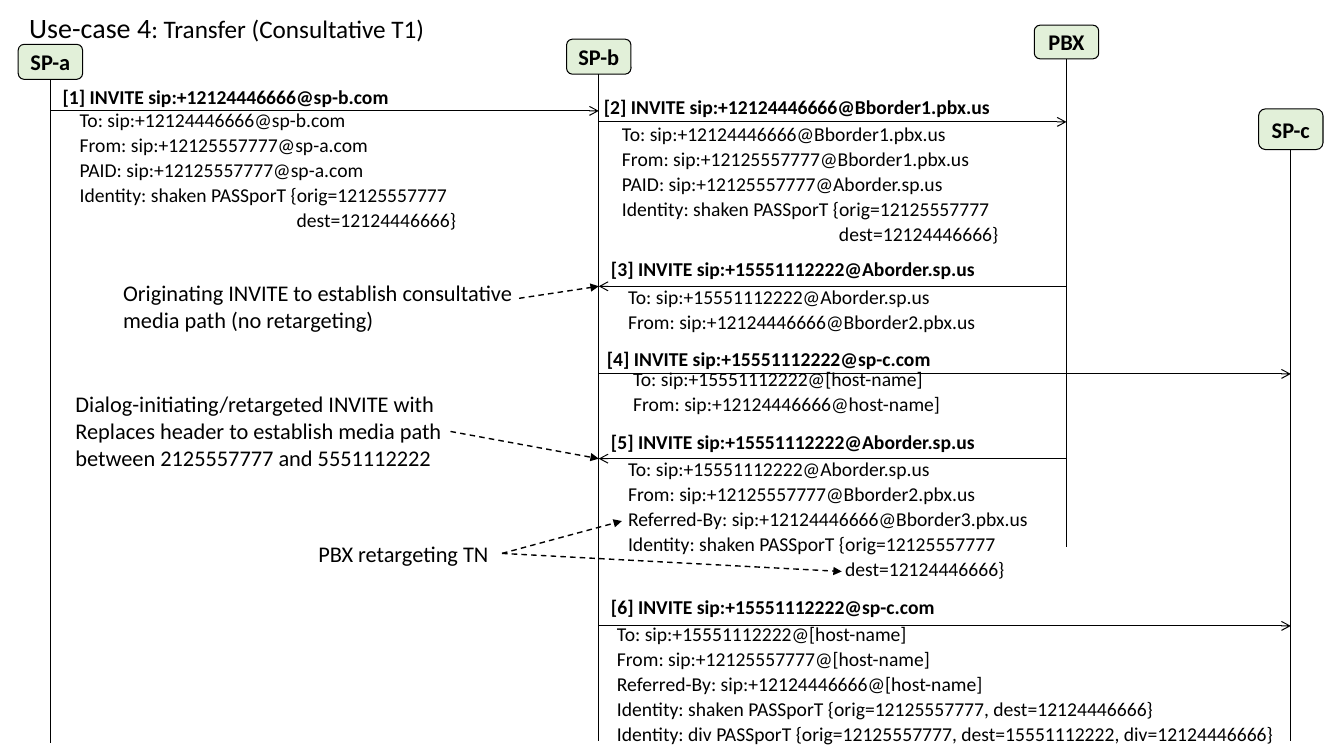
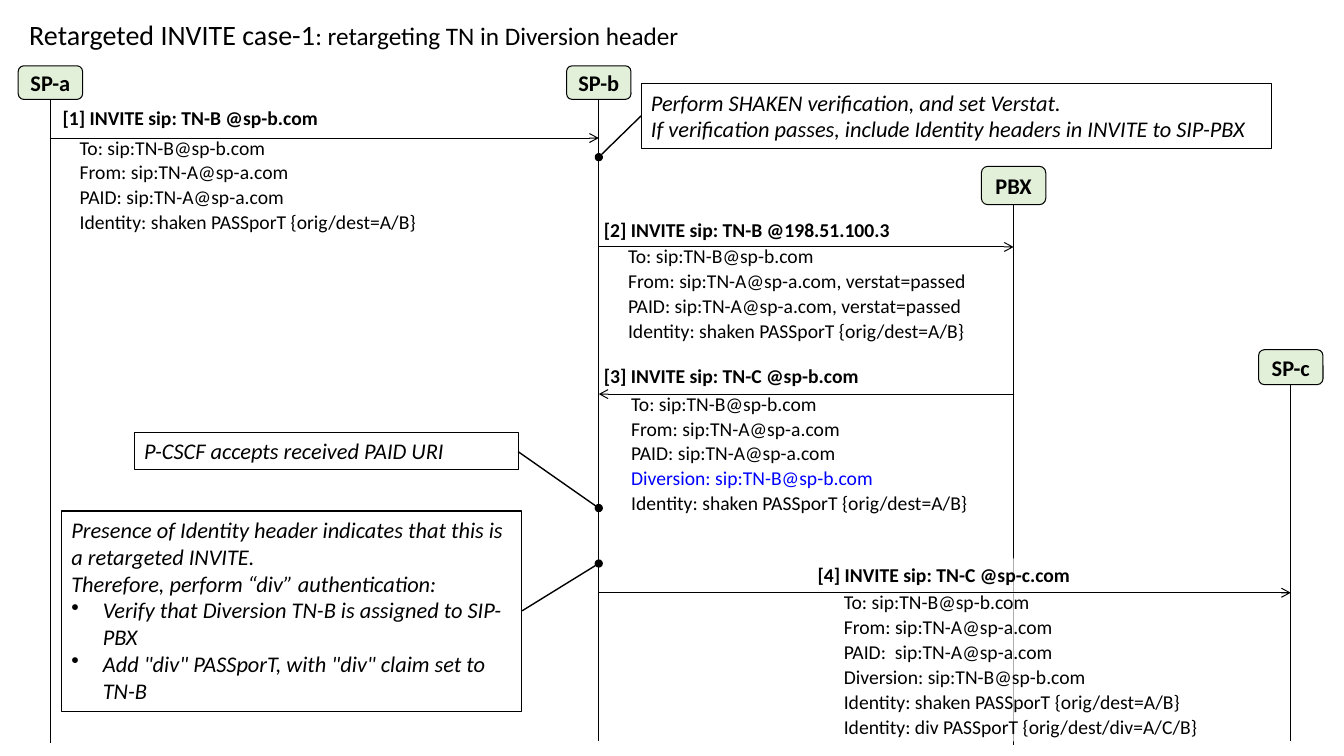
from lxml import etree
from pptx import Presentation
from pptx.dml.color import RGBColor
from pptx.enum import dml, shapes, text
from pptx.oxml.ns import qn
from pptx.util import Pt

COLORS = {"ink": "000000", "node": "E2F0D9", "paper": "FFFFFF", "accent": "0000FF"}
FONT = "Calibri"
DEST = ("dest=12124446666}", {"indent": 155})
SHAKEN = "Identity: shaken PASSporT {orig=12125557777"
SHAKEN_AB = "Identity: shaken PASSporT {orig/dest=A/B}"
SP_A, SP_B, SP_C = 36, 427.7, 922


def color_of(name):
    return RGBColor.from_string(COLORS[name])


def write(paragraph, content, size=14, bold=False, italic=False, color="ink"):
    run = paragraph.add_run()
    run.text = content
    font = run.font
    font.name, font.size = FONT, Pt(size)
    font.bold, font.italic = bold, italic
    font.color.rgb = color_of(color)


class CallFlow:
    def __init__(self):
        self.presentation = Presentation()
        self.presentation.slide_width = Pt(960)
        self.presentation.slide_height = Pt(540)
        self.slide = None

    def new_slide(self, lead, rest, title_height):
        layout = self.presentation.slide_layouts[5]
        self.slide = self.presentation.slides.add_slide(layout)
        title = self.slide.shapes.title
        title.left, title.top = Pt(13.7), Pt(0)
        title.width, title.height = Pt(926), Pt(title_height)
        frame = title.text_frame
        frame.auto_size = text.MSO_AUTO_SIZE.NONE
        frame.vertical_anchor = text.MSO_ANCHOR.MIDDLE
        paragraph = frame.paragraphs[0]
        paragraph.alignment = text.PP_ALIGN.LEFT
        paragraph.line_spacing = 0.9
        write(paragraph, lead, size=20)
        write(paragraph, rest, size=18)

    def line(self, start, end, width=0.75, head=None, dashed=False):
        connector = self.slide.shapes.add_connector(
            shapes.MSO_CONNECTOR.STRAIGHT, *[Pt(value) for value in (*start, *end)])
        connector.line.color.rgb = color_of("ink")
        connector.line.width = Pt(width)
        if dashed:
            connector.line.dash_style = dml.MSO_LINE.DASH
        properties = connector._element.spPr
        if head:
            etree.SubElement(properties.find(qn("a:ln")), qn("a:tailEnd"), type=head)
        etree.SubElement(properties, qn("a:effectLst"))

    def pointer(self, start, end):
        self.line(start, end, width=1, head="triangle", dashed=True)

    def leader(self, start, end):
        self.line(start, end, width=1, head="oval")

    def lifeline(self, name, x, top, height, bottom):
        width = 46
        shape = self.slide.shapes.add_shape(
            shapes.MSO_SHAPE.ROUNDED_RECTANGLE,
            Pt(x - width / 2), Pt(top), Pt(width), Pt(height))
        shape.shadow.inherit = False
        shape.fill.solid()
        shape.fill.fore_color.rgb = color_of("node")
        shape.line.color.rgb = color_of("ink")
        shape.line.width = Pt(0.75)
        frame = shape.text_frame
        frame.word_wrap = False
        frame.margin_left = frame.margin_right = Pt(0)
        frame.margin_top = frame.margin_bottom = Pt(0)
        frame.vertical_anchor = text.MSO_ANCHOR.MIDDLE
        paragraph = frame.paragraphs[0]
        paragraph.alignment = text.PP_ALIGN.CENTER
        write(paragraph, name, size=16, bold=True)
        self.line((x, top + height), (x, bottom))

    def text_box(self, lines, left, top, width, height, margins=(7.2, 3.6),
                 spacing=None, before=None, veiled=False, framed=False, **style):
        shape = self.slide.shapes.add_textbox(Pt(left), Pt(top), Pt(width), Pt(height))
        if veiled:
            shape.fill.solid()
            shape.fill.fore_color.rgb = color_of("paper")
            tint = shape._element.spPr.find(qn("a:solidFill")).find(qn("a:srgbClr"))
            etree.SubElement(tint, qn("a:alpha"), val="68000")
        if framed:
            shape.line.color.rgb = color_of("ink")
            shape.line.width = Pt(0.75)
        frame = shape.text_frame
        frame.word_wrap = True
        frame.auto_size = text.MSO_AUTO_SIZE.SHAPE_TO_FIT_TEXT
        frame.margin_left = frame.margin_right = Pt(margins[0])
        frame.margin_top = frame.margin_bottom = Pt(margins[1])
        for index, entry in enumerate(lines):
            content, options = (entry, {}) if isinstance(entry, str) else entry
            paragraph = frame.add_paragraph() if index else frame.paragraphs[0]
            if spacing:
                paragraph.line_spacing = spacing
                paragraph.space_before = Pt(before)
            self.indent(paragraph, options.get("indent"), options.get("bullet"))
            write(paragraph, content, color=options.get("color", "ink"), **style)

    def indent(self, paragraph, distance, bullet):
        if distance is None:
            return
        properties = paragraph._p.get_or_add_pPr()
        properties.set("marL", str(Pt(distance)))
        if bullet:
            properties.set("indent", str(-Pt(distance)))
            etree.SubElement(properties, qn("a:buChar"), char=bullet)

    def message(self, start, end, y, heading, heading_at, details, details_at,
                widths=(334, 344), veiled=False):
        self.text_box(details, *details_at, widths[1], 17.85 * len(details),
                      margins=(9.4, 0.7), spacing=0.9, before=2.7, veiled=veiled)
        self.text_box([heading], *heading_at, widths[0], 25.2,
                      margins=(9.4, 5), spacing=0.9, before=8, veiled=veiled, bold=True)
        self.line((start, y), (end, y), head="arrow")

    def note(self, lines, left, top, width, height, **style):
        self.text_box(lines, left, top, width, height, size=16, **style)


def consultative_transfer(flow):
    flow.new_slide("Use-case 4", ": Transfer (Consultative T1)", 42.5)
    pbx = 761.8
    flow.lifeline("SP-a", SP_A, 31.7, 25, 530.6)
    flow.lifeline("SP-b", SP_B, 28, 25, 529)
    flow.lifeline("PBX", pbx, 18, 24, 391)
    flow.lifeline("SP-c", SP_C, 77.8, 29, 529)

    flow.message(SP_A, SP_B, 79.2, "[1] INVITE sip:+12124446666@sp-b.com", (35.3, 57.6), [
        "To: sip:+12124446666@sp-b.com",
        "From: sip:+12125557777@sp-a.com",
        "PAID: sip:+12125557777@sp-a.com",
        SHAKEN, DEST], (47.5, 78.5))
    flow.message(SP_B, pbx, 87.1, "[2] INVITE sip:+12124446666@Bborder1.pbx.us", (421.9, 64.8), [
        "To: sip:+12124446666@Bborder1.pbx.us",
        "From: sip:+12125557777@Bborder1.pbx.us",
        "PAID: sip:+12125557777@Aborder.sp.us",
        SHAKEN, DEST], (434.9, 88.6))
    flow.message(pbx, SP_B, 204.5, "[3] INVITE sip:+15551112222@Aborder.sp.us", (427, 180.7), [
        "To: sip:+15551112222@Aborder.sp.us",
        "From: sip:+12124446666@Bborder2.pbx.us"], (439.2, 204.5))
    flow.message(SP_B, SP_C, 267.1, "[4] INVITE sip:+15551112222@sp-c.com", (424.1, 244.8), [
        "To: sip:+15551112222@[host-name]",
        "From: sip:+12124446666@host-name]"], (442.8, 263.5))
    flow.message(pbx, SP_B, 327.6, "[5] INVITE sip:+15551112222@Aborder.sp.us", (427, 303.8), [
        "To: sip:+15551112222@Aborder.sp.us",
        "From: sip:+12125557777@Bborder2.pbx.us",
        "Referred-By: sip:+12124446666@Bborder3.pbx.us",
        SHAKEN, DEST], (439.2, 327.6))
    flow.message(SP_B, SP_C, 447.1, "[6] INVITE sip:+15551112222@sp-c.com", (427, 421.9), [
        "To: sip:+15551112222@[host-name]",
        "From: sip:+12125557777@[host-name]",
        "Referred-By: sip:+12124446666@[host-name]",
        SHAKEN + ", dest=12124446666}",
        "Identity: div PASSporT {orig=12125557777, dest=15551112222, div=12124446666}"],
        (431.3, 445.7), widths=(334, 515.5))

    flow.note(["Originating INVITE to establish consultative media path (no retargeting)"],
              80.9, 195.8, 315.4, 46)
    flow.note(["Dialog-initiating/retargeted INVITE with Replaces header to establish "
               "media path between 2125557777 and 5551112222"], 46.8, 275, 329.8, 65.4)
    flow.note(["PBX retargeting TN"], 220.3, 382.3, 150, 26.6)
    flow.pointer((370.8, 213.1), (SP_B, 204.5))
    flow.pointer((321.8, 308.2), (SP_B, 327.6))
    for target in ((444.2, 372.2), (601.2, 408.2)):
        flow.pointer((358.6, 395.3), target)


def retargeted_invite(flow):
    flow.new_slide("Retargeted INVITE case-1", ": retargeting TN in Diversion header", 52.6)
    pbx = 724
    flow.lifeline("SP-a", SP_A, 47, 24, 530.6)
    flow.lifeline("SP-b", SP_B, 47, 24, 529)
    flow.lifeline("PBX", pbx, 118.8, 27.4, 532)
    flow.lifeline("SP-c", SP_C, 249.8, 25, 529)

    to_b, from_a, paid_a = (
        "To: sip:TN-B@sp-b.com", "From: sip:TN-A@sp-a.com", "PAID: sip:TN-A@sp-a.com")
    diversion = "Diversion: sip:TN-B@sp-b.com"
    passed = ", verstat=passed"
    flow.message(SP_A, SP_B, 98.6, "[1] INVITE sip: TN-B @sp-b.com", (35.3, 72.7),
                 [to_b, from_a, paid_a, SHAKEN_AB], (47.5, 97.9))
    flow.message(SP_B, pbx, 176.4, "[2] INVITE sip: TN-B @198.51.100.3", (421.9, 152.6),
                 [to_b, from_a + passed, paid_a + passed, SHAKEN_AB], (439.2, 175.7))
    flow.message(pbx, SP_B, 281.5, "[3] INVITE sip: TN-C @sp-b.com", (421.9, 257),
                 [to_b, from_a, paid_a, (diversion, {"color": "accent"}), SHAKEN_AB],
                 (441.4, 280.8))
    flow.message(SP_B, SP_C, 423.4, "[4] INVITE sip: TN-C @sp-c.com", (574.6, 398.9),
                 [to_b, from_a, "PAID:  sip:TN-A@sp-a.com", diversion, SHAKEN_AB,
                  "Identity: div PASSporT {orig/dest/div=A/C/B}"],
                 (593.3, 422.6), widths=(247.7, 281.5), veiled=True)

    bullet = {"indent": 22.5, "bullet": "•"}
    flow.note(["P-CSCF accepts received PAID URI"],
              95.8, 308.9, 274.3, 26.6, framed=True, italic=True)
    flow.note(["Presence of Identity header indicates that this is a retargeted INVITE.",
               "Therefore, perform “div” authentication:",
               ("Verify that Diversion TN-B is assigned to SIP-PBX", bullet),
               ("Add \"div\" PASSporT, with \"div\" claim set to TN-B", bullet)],
              43.9, 365, 329, 143.3, framed=True, italic=True)
    flow.note(["Perform SHAKEN verification, and set Verstat.",
               "If verification passes, include Identity headers in INVITE to SIP-PBX"],
              457.9, 59.8, 450.7, 46, framed=True, veiled=True, italic=True)
    flow.leader((370.1, 322.6), (SP_B, 362.9))
    flow.leader((373, 436.3), (SP_B, 402.5))
    flow.leader((457.9, 82.8), (SP_B, 112.3))


def main():
    flow = CallFlow()
    consultative_transfer(flow)
    retargeted_invite(flow)
    flow.presentation.save("out.pptx")


if __name__ == "__main__":
    main()
